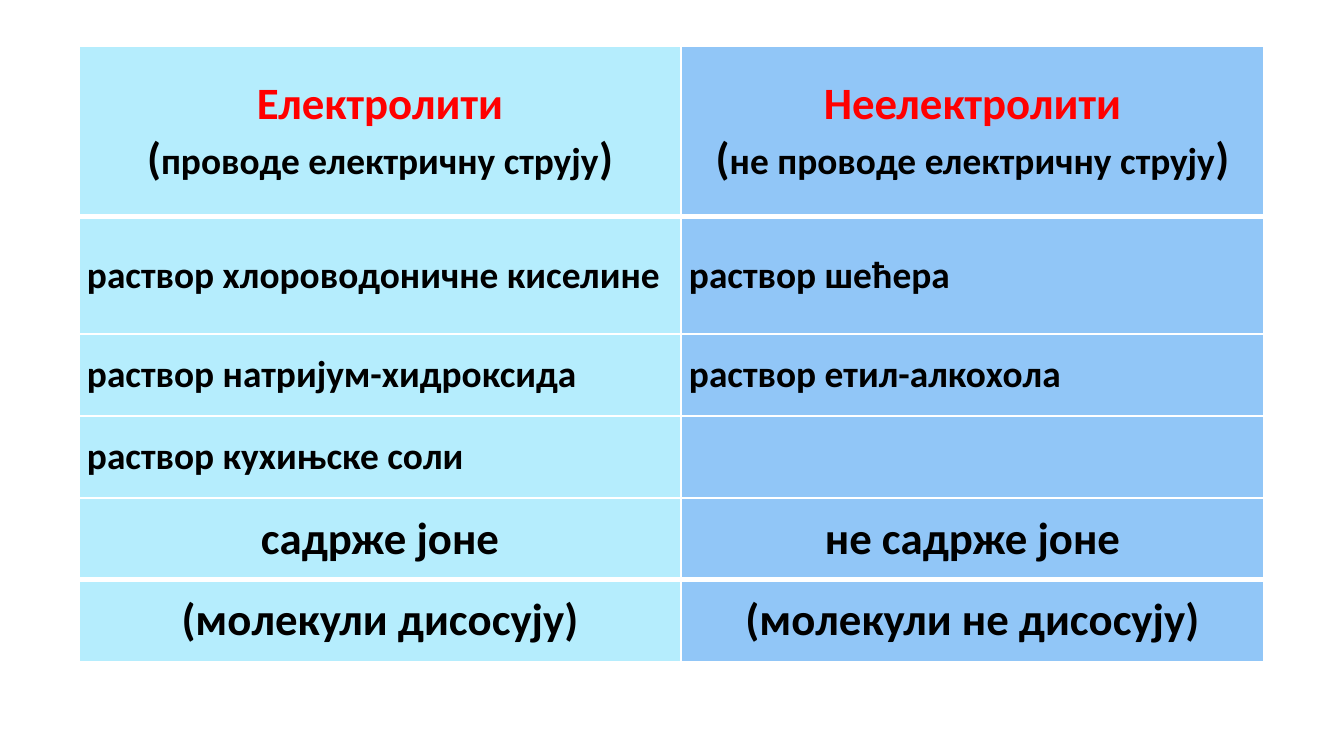
from lxml import etree
from pptx import Presentation
from pptx.dml.color import RGBColor
from pptx.enum.text import MSO_ANCHOR, PP_ALIGN
from pptx.oxml.ns import qn
from pptx.util import Emu, Pt

MIDDLE = MSO_ANCHOR.MIDDLE
LEFT, CENTER = PP_ALIGN.LEFT, PP_ALIGN.CENTER
PX = 914400 / 134.4
RED, BLACK, WHITE = "FF0000", "000000", "FFFFFF"
COLUMN_FILLS = ["B5EDFD", "91C6F7"]
COLUMN_WIDTHS = [602, 583]
ROW_HEIGHTS = [171, 117, 82, 82, 82, 82]
THIN, THICK = 1, 3


def px(length):
    return Emu(round(length * PX))


def color(hex_string):
    return RGBColor.from_string(hex_string)


def heading(title, property_text):
    return [
        [(title, 24, RED)],
        [("(", 24, BLACK), (property_text, 20, BLACK), (")", 24, BLACK)],
    ]


def line(text, size):
    return [[(text, size, BLACK)]]


class SlideBuilder:
    """Holds the text style and the current slide."""

    def __init__(self, slide, font="Calibri"):
        self.slide = slide
        self.font = font

    def table(self, left, top, widths, heights):
        frame = self.slide.shapes.add_table(
            len(heights), len(widths), px(left), px(top), px(sum(widths)), px(sum(heights))
        )
        grid = frame.table
        grid.first_row = grid.horz_banding = False
        for column, width in zip(grid.columns, widths):
            column.width = px(width)
        for row, height in zip(grid.rows, heights):
            row.height = px(height)
        return grid

    def cell(self, cell, paragraphs, align, fill, top_line, bottom_line):
        cell.fill.solid()
        cell.fill.fore_color.rgb = color(fill)
        cell.vertical_anchor = MIDDLE
        cell.margin_left = cell.margin_right = px(8)
        cell.margin_top = cell.margin_bottom = 0
        self.borders(cell, {"a:lnL": THIN, "a:lnR": THIN, "a:lnT": top_line, "a:lnB": bottom_line})
        for index, parts in enumerate(paragraphs):
            frame = cell.text_frame
            paragraph = frame.add_paragraph() if index else frame.paragraphs[0]
            paragraph.alignment = align
            for text, size, text_color in parts:
                run = paragraph.add_run()
                run.text = text
                run.font.name = self.font
                run.font.size = Pt(size)
                run.font.bold = True
                run.font.color.rgb = color(text_color)

    def borders(self, cell, widths):
        properties = cell._tc.get_or_add_tcPr()
        for index, (side, width) in enumerate(widths.items()):
            border = etree.Element(qn(side), w=str(Pt(width)))
            solid = etree.SubElement(border, qn("a:solidFill"))
            etree.SubElement(solid, qn("a:srgbClr"), val=WHITE)
            properties.insert(index, border)


def main():
    presentation = Presentation()
    presentation.slide_width, presentation.slide_height = px(1344), px(756)
    builder = SlideBuilder(presentation.slides.add_slide(presentation.slide_layouts[6]))

    comparison = [
        (CENTER, heading("Електролити", "проводе електричну струју"),
         heading("Неелектролити", "не проводе електричну струју")),
        (LEFT, line("раствор хлороводоничне киселине", 20), line("раствор шећера", 20)),
        (LEFT, line("раствор натријум-хидроксида", 20), line("раствор етил-алкохола", 20)),
        (LEFT, line("раствор кухињске соли", 20), []),
        (CENTER, line("садрже јоне", 24), line("не садрже јоне", 24)),
        (CENTER, line("(молекули дисосују)", 24), line("(молекули не дисосују)", 24)),
    ]
    last = len(comparison) - 1
    thick_edges = {1, last}
    grid = builder.table(79, 46, COLUMN_WIDTHS, ROW_HEIGHTS)
    for row, (align, *contents) in enumerate(comparison):
        top_line = THICK if row in thick_edges else THIN
        bottom_line = THICK if row + 1 in thick_edges else THIN
        for column, (paragraphs, fill) in enumerate(zip(contents, COLUMN_FILLS)):
            builder.cell(grid.cell(row, column), paragraphs, align, fill, top_line, bottom_line)

    presentation.save("out.pptx")


if __name__ == "__main__":
    main()
